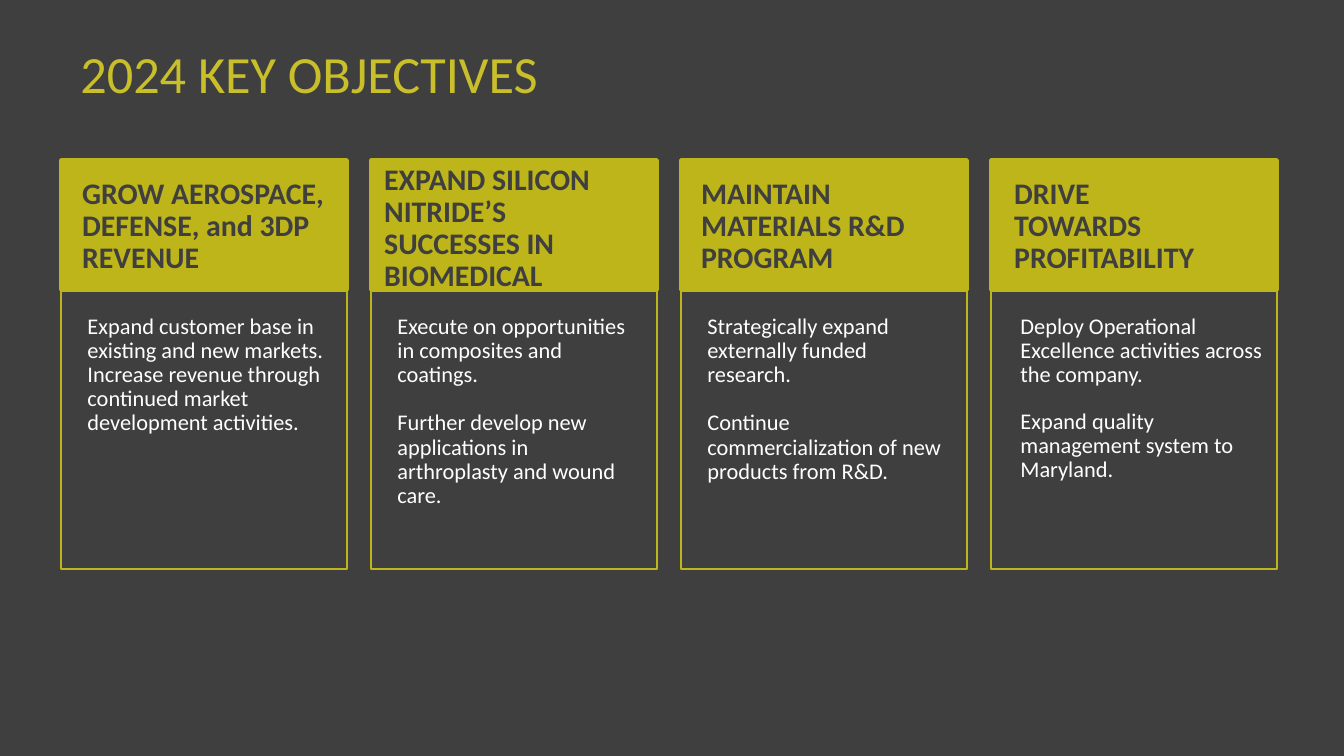
import dataclasses

import pptx
import pptx.dml.color
import pptx.enum.shapes
import pptx.enum.text
import pptx.oxml.ns
import pptx.util
from lxml import etree

PX = 914400 / 134.4


@dataclasses.dataclass(frozen=True)
class Theme:
    font: str = "Calibri"
    background: str = "3F3F3F"
    accent: str = "BEB51B"
    title: str = "C9BF2B"
    heading: str = "3F3F3F"
    body: str = "FFFFFF"
    title_size: int = 28
    heading_size: int = 16
    body_size: int = 12


def px(length):
    return pptx.util.Emu(round(length * PX))


def rgb(color):
    return pptx.dml.color.RGBColor.from_string(color)


class ObjectivesPage:
    def __init__(self, deck, theme):
        self.theme = theme
        self.page = deck.slides.add_slide(deck.slide_layouts.get_by_name("Comparison"))
        self.page.background.fill.solid()
        self.page.background.fill.fore_color.rgb = rgb(theme.background)
        self.bodies = [
            holder for holder in self.page.placeholders
            if holder.placeholder_format.idx in (1, 2, 3, 4)
        ]

    def place(self, box, left, top, width, height):
        box.left, box.top, box.width, box.height = map(px, (left, top, width, height))

    def set_text(self, box, paragraphs, size, color, anchor, bold=False,
                 spacing=0.9, gap=0, indent=0):
        frame = box.text_frame
        frame.word_wrap = True
        frame.auto_size = pptx.enum.text.MSO_AUTO_SIZE.NONE
        frame.vertical_anchor = anchor
        frame.text = "\n".join(paragraphs)
        for index, para in enumerate(frame.paragraphs):
            properties = para._p.get_or_add_pPr()
            properties.set("marL", str(px(indent)))
            properties.set("indent", "0")
            etree.SubElement(properties, pptx.oxml.ns.qn("a:buNone"))
            para.alignment = pptx.enum.text.PP_ALIGN.LEFT
            para.line_spacing = spacing
            para.space_before = pptx.util.Pt(gap if index else 0)
            para.font.name = self.theme.font
            para.font.size = pptx.util.Pt(size)
            para.font.bold = bold
            para.font.color.rgb = rgb(color)

    def title(self, text):
        box = self.page.shapes.title
        self.place(box, 0, 30, 1275, 81)
        self.set_text(box, [text], self.theme.title_size, self.theme.title,
                      pptx.enum.text.MSO_ANCHOR.BOTTOM, spacing=1.0, indent=67)

    def panel(self, left, top, width, height, line_width, filled):
        box = self.page.shapes.add_shape(
            pptx.enum.shapes.MSO_SHAPE.ROUNDED_RECTANGLE,
            px(left), px(top), px(width), px(height))
        box.adjustments[0] = 0
        box.shadow.inherit = False
        if filled:
            box.fill.solid()
            box.fill.fore_color.rgb = rgb(self.theme.accent)
        else:
            box.fill.background()
        box.line.color.rgb = rgb(self.theme.accent)
        box.line.width = pptx.util.Pt(line_width)

    def heading(self, text, left, top, width, height):
        box = self.page.shapes.add_textbox(px(left), px(top), px(width), px(height))
        self.set_text(box, [text], self.theme.heading_size, self.theme.heading,
                      pptx.enum.text.MSO_ANCHOR.BOTTOM, bold=True)

    def body(self, box, paragraphs, left, top, width, height, gap):
        self.place(box, left, top, width, height)
        self.set_text(box, paragraphs, self.theme.body_size, self.theme.body,
                      pptx.enum.text.MSO_ANCHOR.TOP, gap=gap)


@dataclasses.dataclass(frozen=True)
class Objective:
    heading: str
    heading_area: tuple
    details: tuple
    body_width: int
    body_offset: int = 13
    gap: int = 13


OBJECTIVES = [
    Objective("GROW AEROSPACE, DEFENSE, and 3DP REVENUE", (8, 185, 274, 97),
              ("Expand customer base in existing and new markets. "
               "Increase revenue through continued market development activities.",),
              276),
    Objective("EXPAND SILICON NITRIDE’S SUCCESSES IN BIOMEDICAL", (0, 234, 286, 66),
              ("Execute on opportunities in composites and coatings.",
               "Further develop new applications in arthroplasty and wound care."),
              266),
    Objective("MAINTAIN MATERIALS R&D PROGRAM", (7, 185, 289, 97),
              ("Strategically expand externally funded research.",
               "Continue commercialization of new products from R&D."),
              266),
    Objective("DRIVE TOWARDS PROFITABILITY", (10, 204, 232, 78),
              ("Deploy Operational Excellence activities across the company.",
               "Expand quality management system to Maryland."),
              269, body_offset=16, gap=12),
]

COLUMN_LEFT, COLUMN_PITCH, COLUMN_TOP, COLUMN_WIDTH = 61, 310, 160, 286
HEADER_HEIGHT, CARD_HEIGHT = 130, 409
BODY_TOP, BODY_HEIGHT = 308, 250


def main():
    deck = pptx.Presentation()
    deck.slide_width, deck.slide_height = px(1344), px(756)
    page = ObjectivesPage(deck, Theme())
    page.title("2024 KEY OBJECTIVES")
    for column, objective in enumerate(OBJECTIVES):
        left = COLUMN_LEFT + column * COLUMN_PITCH
        page.panel(left, COLUMN_TOP, COLUMN_WIDTH, HEADER_HEIGHT, 2, True)
        page.panel(left, COLUMN_TOP, COLUMN_WIDTH, CARD_HEIGHT, 1, False)
        offset, top, width, height = objective.heading_area
        page.heading(objective.heading, left + offset, top, width, height)
        page.body(page.bodies[column], objective.details, left + objective.body_offset,
                  BODY_TOP, objective.body_width, BODY_HEIGHT, objective.gap)
    deck.save("out.pptx")


if __name__ == "__main__":
    main()
